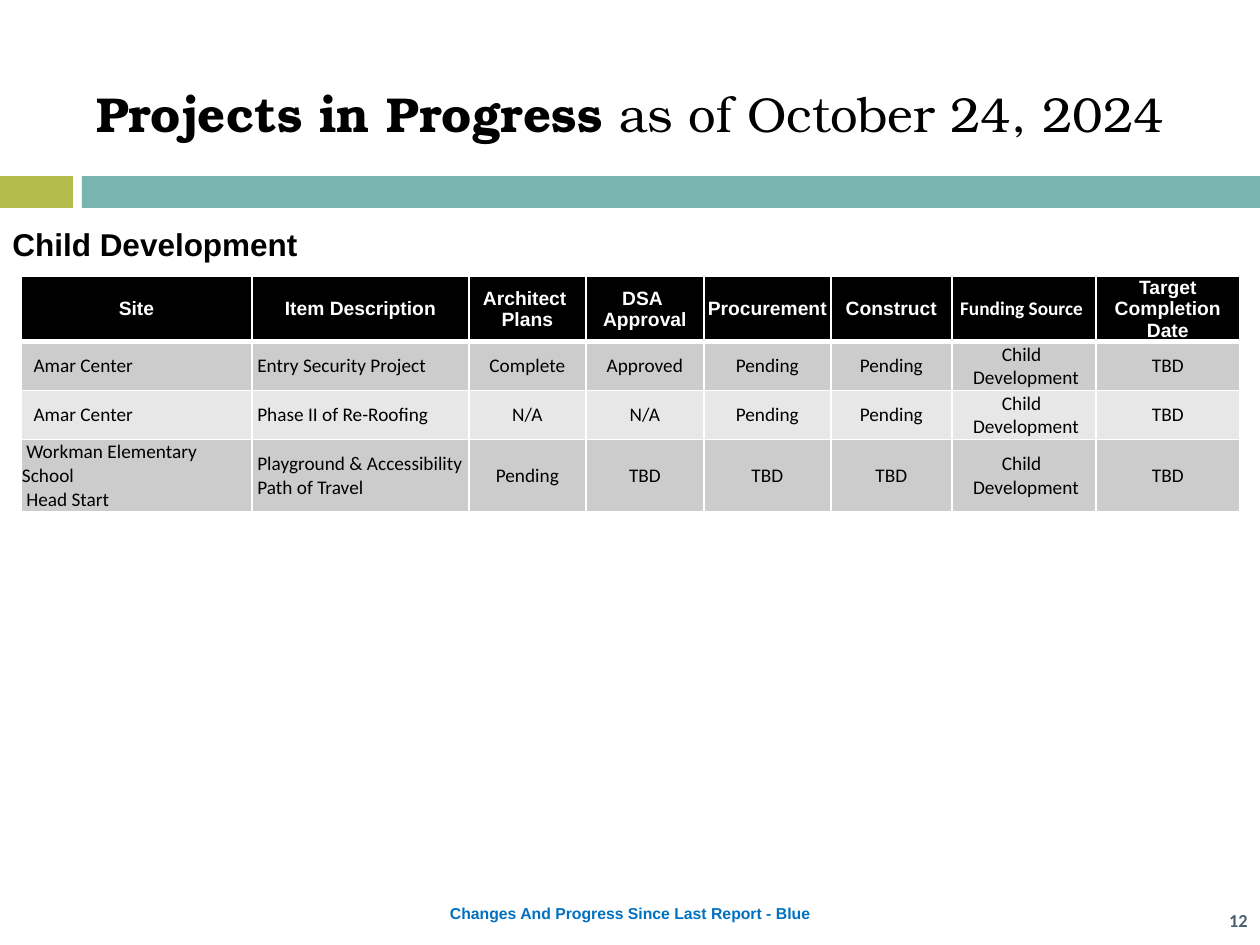
from dataclasses import dataclass

from pptx import Presentation
from pptx.dml.color import RGBColor
from pptx.enum.shapes import MSO_SHAPE
from pptx.enum.text import MSO_ANCHOR, MSO_AUTO_SIZE, PP_ALIGN
from pptx.oxml.ns import qn
from pptx.util import Emu, Pt
from lxml import etree

RECTANGLE = MSO_SHAPE.RECTANGLE
TOP, MIDDLE = MSO_ANCHOR.TOP, MSO_ANCHOR.MIDDLE
LEFT, CENTER, RIGHT = PP_ALIGN.LEFT, PP_ALIGN.CENTER, PP_ALIGN.RIGHT
NO_FIT, GROW = MSO_AUTO_SIZE.NONE, MSO_AUTO_SIZE.SHAPE_TO_FIT_TEXT

PX_PER_INCH = 126
TITLE_ONLY = 5


@dataclass(frozen=True)
class Theme:
    """Colours, fonts and type sizes of the deck."""
    black: str = "000000"
    white: str = "FFFFFF"
    olive: str = "B4BC4C"
    teal: str = "79B5B0"
    blue: str = "0070C0"
    slate: str = "4A606E"
    bands: tuple = ("CCCCCC", "E7E7E7")
    title_font: str = "TeX Gyre Bonum"
    heading_font: str = "Arial"
    body_font: str = "Calibri"
    title_size: float = 28
    section_size: float = 18
    table_size: float = 11
    number_size: float = 10.5
    footer_size: float = 9


THEME = Theme()
COLUMN_WIDTHS = (231, 217, 117, 118, 127, 121, 144, 144)
ROW_HEIGHTS = (63, 49, 49, 72)
FUNDING_COLUMN = 6
FUNDING = "Child \n Development"
HEADERS = ("Site", "Item Description", "Architect \nPlans", "DSA \nApproval",
           "Procurement", "Construct", "Funding Source ", "Target Completion Date")
PROJECTS = (
    ("Amar Center", " Entry Security Project", "Complete", "Approved",
     "Pending", "Pending", FUNDING, "TBD"),
    ("Amar Center", " Phase II of Re-Roofing", "N/A", "N/A",
     "Pending", "Pending", FUNDING, "TBD"),
    (" Workman Elementary School\n Head Start",
     " Playground & Accessibility\n Path of Travel", "Pending", "TBD",
     "TBD", "TBD", FUNDING, "TBD"),
)


def px(length):
    """Turn whole pixels into EMU."""
    return Emu(round(length * 914400 / PX_PER_INCH))


def style_font(font, name, size, color, bold):
    """Set the typeface, size, colour and weight of a font."""
    font.name, font.size, font.bold = name, Pt(size), bold
    font.color.rgb = RGBColor.from_string(color)


def style_frame(frame, align, name, size, color, bold):
    """Align and format every paragraph of a text frame."""
    for para in frame.paragraphs:
        para.alignment = align
        for span in para.runs:
            style_font(span.font, name, size, color, bold)


def add_title(page, bold_text, plain_text):
    """Fill the title placeholder with a bold and a plain part."""
    title = page.shapes.title
    title.left, title.top, title.width, title.height = map(px, (0, 82, 1260, 122))
    frame = title.text_frame
    frame.vertical_anchor, frame.auto_size = TOP, NO_FIT
    frame.margin_top = px(2)
    para = frame.paragraphs[0]
    para.alignment = CENTER
    for text, bold in ((bold_text, True), (plain_text, False)):
        span = para.add_run()
        span.text = text
        style_font(span.font, THEME.title_font, THEME.title_size, THEME.black, bold)


def add_bar(page, left, width, color):
    """Add one part of the coloured band under the title."""
    bar = page.shapes.add_shape(RECTANGLE, px(left), px(176), px(width), px(32))
    bar.shadow.inherit = False
    bar.fill.solid()
    bar.fill.fore_color.rgb = RGBColor.from_string(color)
    bar.line.fill.background()


def add_label(page, text, area, align, name, size, color, anchor=TOP, fit=GROW):
    """Add a bold one-line text box."""
    frame = page.shapes.add_textbox(*map(px, area)).text_frame
    frame.word_wrap, frame.auto_size, frame.vertical_anchor = True, fit, anchor
    frame.text = text
    style_frame(frame, align, name, size, color, True)


def set_borders(cell, bottom_width):
    """Draw white borders around a cell."""
    properties = cell._tc.get_or_add_tcPr()
    sides = (("a:lnL", 1), ("a:lnR", 1), ("a:lnT", 1), ("a:lnB", bottom_width))
    for index, (tag, width) in enumerate(sides):
        line = etree.Element(qn(tag), w=str(Pt(width)))
        fill = etree.SubElement(line, qn("a:solidFill"))
        etree.SubElement(fill, qn("a:srgbClr"), val=THEME.white)
        properties.insert(index, line)


def fill_cell(cell, text, row, column):
    """Write and format one table cell by its place in the grid."""
    header = row == 0
    cell.text = text
    cell.vertical_anchor = MIDDLE
    if column > 0 or header or "\n" in text:
        cell.margin_left = cell.margin_right = cell.margin_top = px(1)
        cell.margin_bottom = 0
    cell.fill.solid()
    fill = THEME.black if header else THEME.bands[(row - 1) % 2]
    cell.fill.fore_color.rgb = RGBColor.from_string(fill)
    set_borders(cell, 3 if header or row == 0 else 1)
    arial = header and column != FUNDING_COLUMN
    style_frame(cell.text_frame, CENTER if header or column > 1 else LEFT,
                THEME.heading_font if arial else THEME.body_font,
                THEME.table_size, THEME.white if header else THEME.black, header)


def add_project_table(page):
    """Add the table of projects."""
    rows = (HEADERS, *PROJECTS)
    table = page.shapes.add_table(
        len(rows), len(HEADERS), px(21), px(276),
        px(sum(COLUMN_WIDTHS)), px(sum(ROW_HEIGHTS))).table
    for column, width in zip(table.columns, COLUMN_WIDTHS):
        column.width = px(width)
    for line, height in zip(table.rows, ROW_HEIGHTS):
        line.height = px(height)
    for row, texts in enumerate(rows):
        for column, text in enumerate(texts):
            fill_cell(table.cell(row, column), text, row, column)


def main():
    """Build the projects slide and save it."""
    deck = Presentation()
    deck.slide_width, deck.slide_height = px(1260), px(945)
    page = deck.slides.add_slide(deck.slide_layouts[TITLE_ONLY])
    add_bar(page, 0, 73, THEME.olive)
    add_bar(page, 82, 1178, THEME.teal)
    add_project_table(page)
    add_title(page, "Projects in Progress ", "as of October 24, 2024")
    add_label(page, "Changes And Progress Since Last Report - Blue", (0, 898, 1260, 32),
              CENTER, THEME.heading_font, THEME.footer_size, THEME.blue)
    add_label(page, "Child Development ", (0, 219, 323, 50),
              LEFT, THEME.heading_font, THEME.section_size, THEME.black)
    add_label(page, "12", (513, 895, 747, 50), RIGHT, THEME.body_font,
              THEME.number_size, THEME.slate, MIDDLE, NO_FIT)
    deck.save("out.pptx")


if __name__ == "__main__":
    main()
